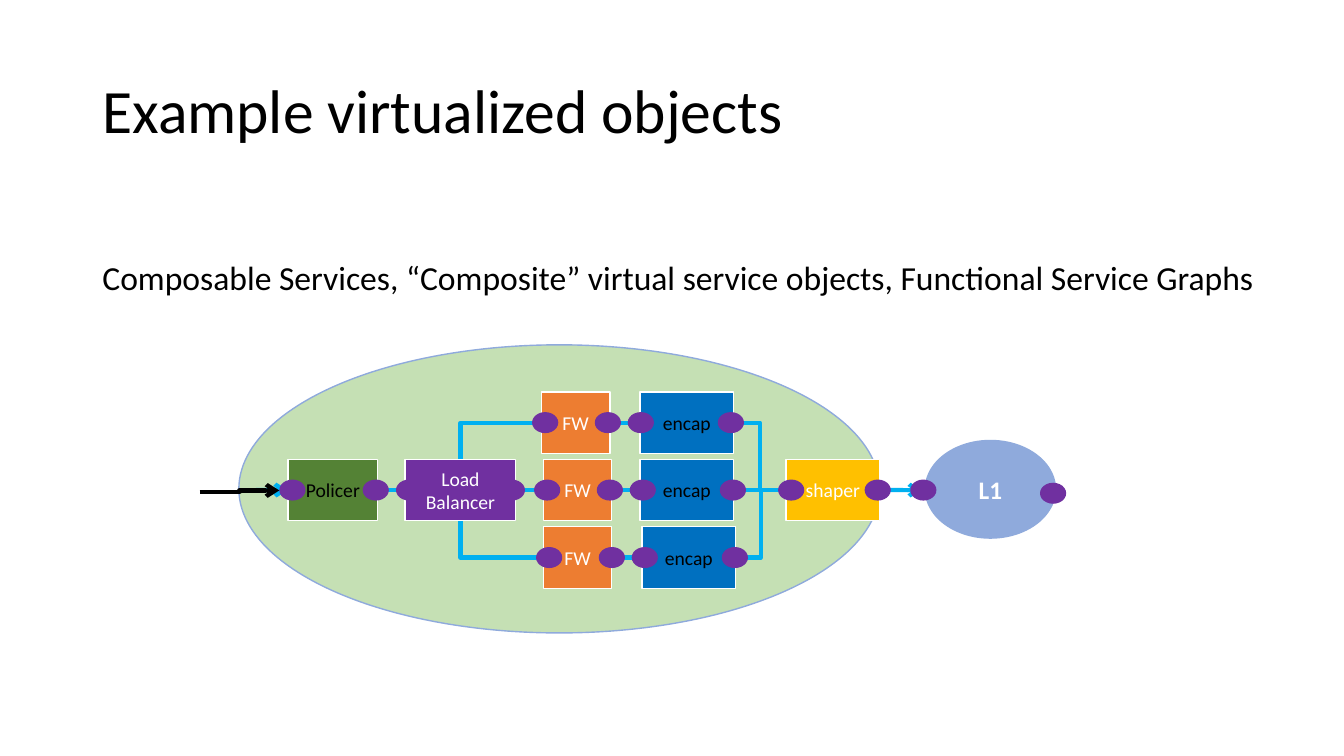
from lxml.etree import SubElement
from pptx import Presentation
from pptx.dml.color import RGBColor
from pptx.enum.shapes import MSO_CONNECTOR, MSO_SHAPE
from pptx.enum.text import MSO_ANCHOR, PP_ALIGN
from pptx.oxml.ns import qn
from pptx.util import Cm, Pt

COLORS = {
    "black": "000000", "white": "FFFFFF", "service": "C5E0B4", "outline": "8FAADC",
    "policer": "548235", "purple": "7030A0", "firewall": "ED7D31",
    "encap": "0070C0", "shaper": "FFC000", "link": "00B0F0",
}
TOP, LEFT, BOTTOM, RIGHT = range(4)
BOX_HEIGHT = 1.55
PORT_WIDTH, PORT_HEIGHT = 0.66, 0.53
MIDDLE_Y, ROW_PITCH, ROW_SHIFT = 12.35, 1.7, 0.05


def color(name):
    return RGBColor.from_string(COLORS[name])


def write(frame, text, size=14, ink="black", bold=False, align=PP_ALIGN.LEFT,
          anchor=MSO_ANCHOR.MIDDLE, wrap=True, spacing=1.0):
    frame.word_wrap = wrap
    frame.vertical_anchor = anchor
    paragraph = frame.paragraphs[0]
    paragraph.alignment = align
    paragraph.line_spacing = spacing
    run = paragraph.add_run()
    run.text = text
    run.font.name = "Calibri"
    run.font.size = Pt(size)
    run.font.bold = bold
    run.font.color.rgb = color(ink)


class Diagram:
    """Draws on one slide; all lengths are in centimetres."""

    def __init__(self, slide):
        self.shapes = slide.shapes

    def text(self, text, left, top, width, height, **style):
        label = self.shapes.add_textbox(Cm(left), Cm(top), Cm(width), Cm(height))
        write(label.text_frame, text, **style)

    def shape(self, kind, left, top, width, height, fill, line=None):
        shape = self.shapes.add_shape(kind, Cm(left), Cm(top), Cm(width), Cm(height))
        shape.shadow.inherit = False
        shape.fill.solid()
        shape.fill.fore_color.rgb = color(fill)
        if line:
            shape.line.color.rgb = color(line)
            shape.line.width = Pt(1)
        else:
            shape.line.fill.background()
        return shape

    def box(self, text, left, center_y, width, fill, ink="black"):
        box = self.shape(MSO_SHAPE.RECTANGLE, left, center_y - BOX_HEIGHT / 2,
                         width, BOX_HEIGHT, fill, "white")
        write(box.text_frame, text, ink=ink, align=PP_ALIGN.CENTER)
        return box

    def port(self, center_x, center_y):
        self.shape(MSO_SHAPE.OVAL, center_x - PORT_WIDTH / 2, center_y - PORT_HEIGHT / 2,
                   PORT_WIDTH, PORT_HEIGHT, "purple")

    def line(self, start=(0, 0), end=(0, 0), kind=MSO_CONNECTOR.STRAIGHT,
             ink="link", arrow=False):
        line = self.shapes.add_connector(kind, *map(Cm, start + end))
        line.line.color.rgb = color(ink)
        line.line.width = Pt(3)
        if arrow:
            SubElement(line.line._get_or_add_ln(), qn("a:tailEnd"), type="arrow")
        SubElement(line._element.spPr, qn("a:effectLst"))
        return line

    def join(self, source, target, kind=MSO_CONNECTOR.STRAIGHT,
             source_side=RIGHT, target_side=LEFT):
        line = self.line(kind=kind)
        line.begin_connect(source, source_side)
        line.end_connect(target, target_side)
        return line

    def corner(self, source, target, target_side):
        """Join with a single bend, leaving the source's left side."""
        line = self.join(source, target, MSO_CONNECTOR.ELBOW, LEFT, target_side)
        line._element.spPr.find(qn("a:prstGeom")).set("prst", "bentConnector2")


def main():
    deck = Presentation()
    deck.slide_width, deck.slide_height = Cm(33.87), Cm(19.05)
    diagram = Diagram(deck.slides.add_slide(deck.slide_layouts[6]))

    diagram.shape(MSO_SHAPE.OVAL, 6.02, 8.69, 16.15, 7.26, "service", "outline")
    diagram.text("Example virtualized objects", 2.33, 1.01, 29.21, 3.68,
                 size=44, spacing=0.9)
    diagram.text("Composable Services, “Composite” virtual service objects, "
                 "Functional Service Graphs", 2.33, 6.35, 29.8, 1.28,
                 size=24, anchor=MSO_ANCHOR.TOP, wrap=False)

    policer = diagram.box("Policer", 7.26, MIDDLE_Y, 2.26, "policer")
    balancer = diagram.box("Load Balancer", 10.21, MIDDLE_Y, 2.79, "purple", "white")
    shaper = diagram.box("shaper", 19.81, MIDDLE_Y, 2.36, "shaper", "white")
    row_centers = [MIDDLE_Y + step * ROW_PITCH for step in (-1, 0, 1)]
    firewalls = [diagram.box("FW", left, y, 1.73, "firewall", "white")
                 for left, y in zip((13.64, 13.69, 13.69), row_centers)]
    encaps = [diagram.box("encap", left, y, 2.36, "encap")
              for left, y in zip((16.13, 16.13, 16.18), row_centers)]

    diagram.join(policer, balancer)
    diagram.corner(firewalls[0], balancer, TOP)
    diagram.join(balancer, firewalls[1])
    diagram.corner(firewalls[2], balancer, BOTTOM)
    bends = (MSO_CONNECTOR.ELBOW, MSO_CONNECTOR.STRAIGHT, MSO_CONNECTOR.ELBOW)
    for firewall, encap, bend in zip(firewalls, encaps, bends):
        diagram.join(firewall, encap)
        diagram.join(encap, shaper, bend)
    inlet = diagram.line((6.35, MIDDLE_Y), (7.26, MIDDLE_Y), arrow=True)
    inlet.end_connect(policer, LEFT)
    outlet = diagram.line((22.17, MIDDLE_Y), (23.24, MIDDLE_Y), arrow=True)
    outlet.begin_connect(shaper, RIGHT)

    link_object = diagram.shape(MSO_SHAPE.OVAL, 23.32, 11.1, 3.28, 2.46,
                                "outline", "outline")
    write(link_object.text_frame, "L1", size=18, ink="white", bold=True,
          align=PP_ALIGN.CENTER)

    for row, y in enumerate(row_centers):
        for first_x in (13.74, 15.32, 16.15, 18.42):
            diagram.port(first_x + row * ROW_SHIFT, y)
    for x in (7.37, 9.47, 10.31, 12.9, 19.94, 22.12, 23.27):
        diagram.port(x, MIDDLE_Y)
    diagram.port(26.54, 12.43)

    diagram.line((5.03, 12.4), (7.04, 12.36), MSO_CONNECTOR.ELBOW, "black", arrow=True)
    deck.save("out.pptx")


if __name__ == "__main__":
    main()
